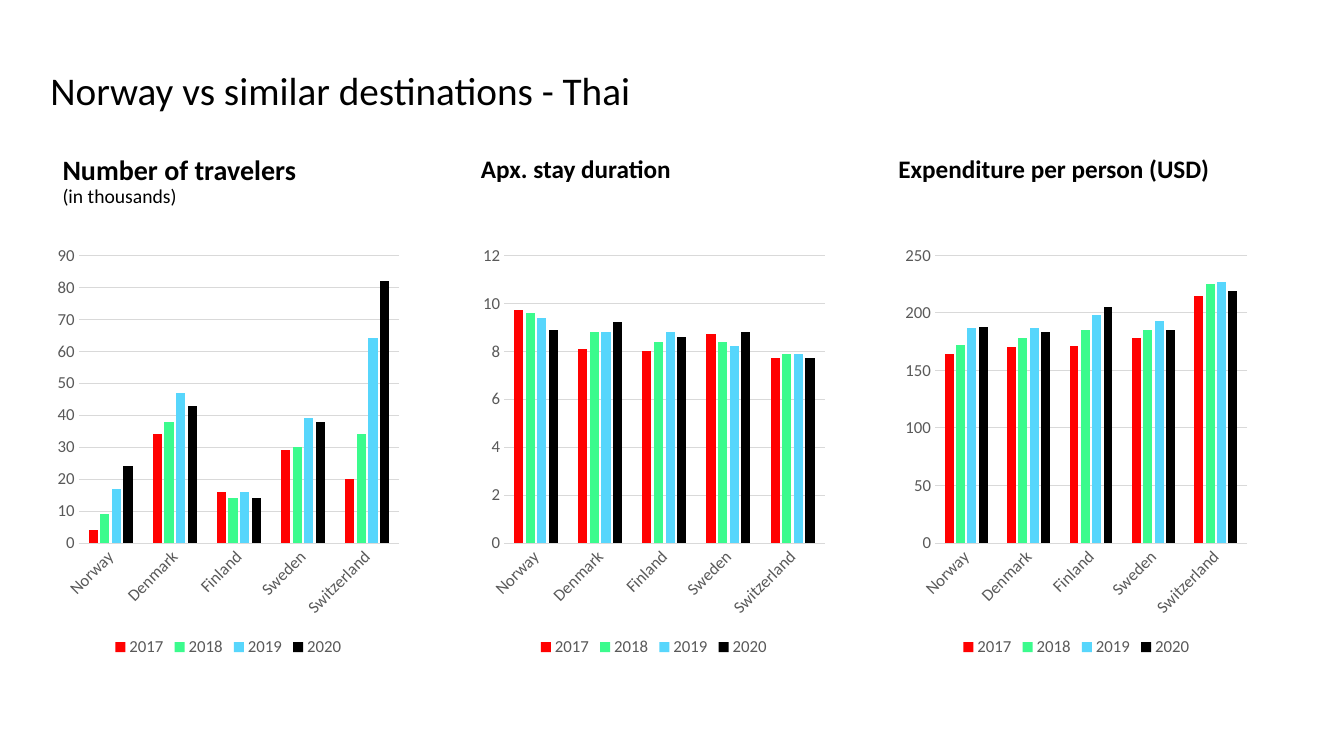
from pptx import Presentation
from pptx.chart.data import CategoryChartData
from pptx.dml.color import RGBColor
from pptx.enum.chart import XL_CHART_TYPE as ChartType, XL_LEGEND_POSITION as LegendPos
from pptx.enum.chart import XL_TICK_MARK as TickMark
from pptx.oxml.ns import qn
from pptx.util import Inches, Pt

FONT = "Calibri"
BLACK, GRAY, GRID = "000000", "595959", "D9D9D9"
COUNTRIES = ["Norway", "Denmark", "Finland", "Sweden", "Switzerland"]
YEAR_COLORS = {"2017": "FF0101", "2018": "3BFB8D", "2019": "57D6FC", "2020": BLACK}


def style_font(font, size, color, bold=False):
    font.name, font.size, font.bold = FONT, Pt(size), bold
    font.color.rgb = RGBColor.from_string(color)


def add_text(left, top, width, height, lines):
    """Add a margin-free text box; each line is (text, size, bold)."""
    frame = slide.shapes.add_textbox(
        Inches(left), Inches(top), Inches(width), Inches(height)).text_frame
    frame.word_wrap = True
    frame.margin_left = frame.margin_right = frame.margin_top = frame.margin_bottom = 0
    frame.text = "\n".join(text for text, _, _ in lines)
    for paragraph, (_, size, bold) in zip(frame.paragraphs, lines):
        paragraph.line_spacing = 0.9
        style_font(paragraph.runs[0].font, size, BLACK, bold)


prs = Presentation()
prs.slide_width, prs.slide_height = Inches(13.33), Inches(7.5)
slide = prs.slides.add_slide(prs.slide_layouts[6])

add_text(0.5, 0.71, 11.94, 0.94, [("Norway vs similar destinations - Thai", 28, False)])

# chart left, heading left, heading lines, axis maximum, axis step, number format, values by year
panels = [
    (0.5, 0.62, [("Number of travelers", 20, True), ("(in thousands)", 14, False)], 90, 10, "0",
     [(4, 34, 16, 29, 20), (9, 38, 14, 30, 34), (17, 47, 16, 39, 64), (24, 43, 14, 38, 82)]),
    (4.72, 4.77, [("Apx. stay duration", 18, True)], 12, 2, "0",
     [(9.7, 8.1, 8, 8.7, 7.7), (9.6, 8.8, 8.4, 8.4, 7.9),
      (9.4, 8.8, 8.8, 8.2, 7.9), (8.9, 9.2, 8.6, 8.8, 7.7)]),
    (8.91, 8.91, [("Expenditure per person (USD)", 18, True)], 250, 50, "0",
     [(164, 170, 171, 178, 215), (172, 178, 185, 185, 225),
      (187, 187, 198, 193, 227), (188, 183, 205, 185, 219)]),
]

for chart_left, heading_left, heading, axis_max, step, number_format, values in panels:
    add_text(heading_left, 1.55, 3.52, 0.55, heading)

    data = CategoryChartData()
    data.categories = COUNTRIES
    for year, year_values in zip(YEAR_COLORS, values):
        data.add_series(year, year_values)
    chart = slide.shapes.add_chart(
        ChartType.COLUMN_CLUSTERED, Inches(chart_left), Inches(2.35),
        Inches(3.53), Inches(4.21), data).chart
    chart.has_title = False
    style_font(chart.font, 10, BLACK)

    chart.has_legend = True
    chart.legend.position = LegendPos.BOTTOM
    chart.legend.include_in_layout = False
    style_font(chart.legend.font, 12, GRAY)

    plot = chart.plots[0]
    plot.gap_width, plot.overlap, plot.vary_by_categories = 219, -27, False
    for series, color in zip(plot.series, YEAR_COLORS.values()):
        series.format.fill.solid()
        series.format.fill.fore_color.rgb = RGBColor.from_string(color)
        series.invert_if_negative = False

    countries, amounts = chart.category_axis, chart.value_axis
    for axis in (countries, amounts):
        axis.major_tick_mark = axis.minor_tick_mark = TickMark.NONE
        style_font(axis.tick_labels.font, 12, GRAY)
    label_body = countries._element.find(qn("c:txPr")).find(qn("a:bodyPr"))
    label_body.set("rot", "-2700000")
    label_body.set("vert", "horz")

    amounts.minimum_scale, amounts.maximum_scale, amounts.major_unit = 0, axis_max, step
    amounts.tick_labels.number_format = number_format
    amounts.tick_labels.number_format_is_linked = False
    amounts.format.line.fill.background()
    amounts.has_major_gridlines = True
    for line in (countries.format.line, amounts.major_gridlines.format.line):
        line.width = Pt(0.75)
        line.color.rgb = RGBColor.from_string(GRID)

prs.save("out.pptx")
